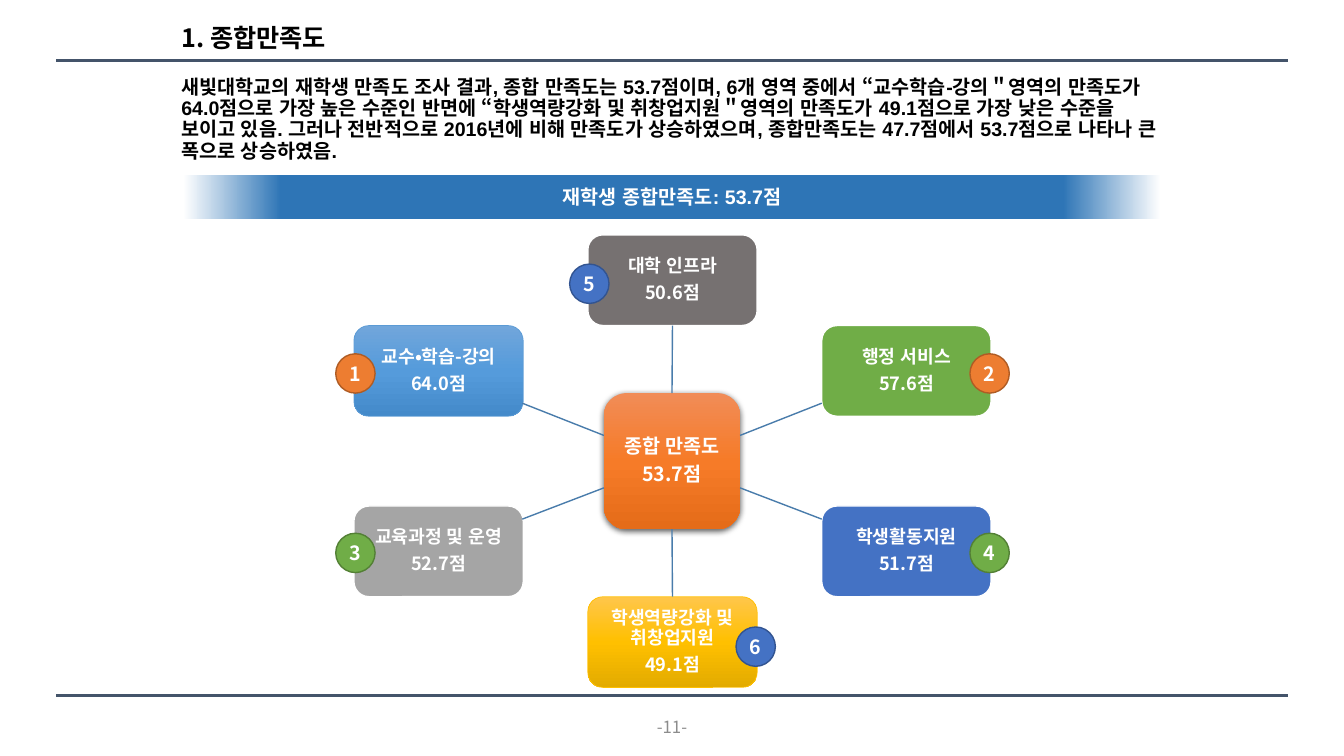
from dataclasses import dataclass

from lxml import etree
from pptx import Presentation
from pptx.dml.color import RGBColor
from pptx.enum.lang import MSO_LANGUAGE_ID
from pptx.enum.shapes import MSO_CONNECTOR, MSO_SHAPE
from pptx.enum.text import MSO_ANCHOR, PP_ALIGN
from pptx.oxml.ns import qn
from pptx.shapes.autoshape import Shape
from pptx.shapes.connector import Connector
from pptx.slide import Slide
from pptx.util import Pt

EMU_PER_PX = 9144
KOREAN = MSO_LANGUAGE_ID.KOREAN
STRAIGHT = MSO_CONNECTOR.STRAIGHT
RECTANGLE, ROUNDED, ELLIPSE = MSO_SHAPE.RECTANGLE, MSO_SHAPE.ROUNDED_RECTANGLE, MSO_SHAPE.OVAL
TOP, MIDDLE = MSO_ANCHOR.TOP, MSO_ANCHOR.MIDDLE
LEFT, CENTER = PP_ALIGN.LEFT, PP_ALIGN.CENTER
TOP_SIDE, BOTTOM_SIDE = 0, 2
BOX_WIDTH, BOX_HEIGHT, BADGE_SIZE = 168, 90, 39
BADGE_LEFT, BADGE_RIGHT = -18, 147

Stops = tuple[tuple[int, str], ...]


@dataclass(frozen=True)
class Theme:
    """Colours, fonts and type sizes of the slide."""
    sans: str = "Noto Sans CJK KR"
    latin: str = "Arial"
    title: int = 18
    normal: int = 14
    label: int = 13
    footer: int = 12
    black: str = "000000"
    white: str = "FFFFFF"
    muted: str = "8C8C8C"
    rule: str = "44546A"
    spoke: str = "497CAB"
    brown: str = "767171"
    gray: str = "A5A5A5"
    orange: str = "ED7D31"
    orange_edge: str = "AF5C24"
    green: str = "70AD47"
    green_edge: str = "538035"
    blue: str = "4472C4"
    blue_edge: str = "325491"
    sky_edge: str = "5B9BD5"
    gold_edge: str = "FFC000"
    banner: Stops = ((0, "FFFFFF"), (10, "2E75B6"), (90, "2E75B6"), (100, "FFFFFF"))
    hub: Stops = ((0, "F18C57"), (50, "F67B28"), (100, "E56C19"))
    sky: Stops = ((0, "71A6DB"), (50, "559BDB"), (100, "448ACA"))
    gold: Stops = ((0, "FFC64B"), (50, "FFC000"), (100, "E3AB00"))


THEME = Theme()


@dataclass(frozen=True)
class TextStyle:
    """Look of the paragraphs in one text frame."""
    size: int
    color: str = THEME.white
    font: str = THEME.sans
    bold: bool = True
    align: PP_ALIGN = CENTER
    anchor: MSO_ANCHOR = MIDDLE
    spacing: float = 1.0
    after: int = 0


@dataclass(frozen=True)
class Area:
    """One satisfaction area with its score box and numbered badge."""
    number: int
    name: str
    score: str
    left: int
    top: int
    fill: str | Stops
    edge: str
    edge_width: float
    badge_shift: int
    badge_top: int
    badge_fill: str
    badge_edge: str


AREAS = (
    Area(5, "대학 인프라", "50.6점", 583, 233, THEME.brown, THEME.white, 1,
         BADGE_LEFT, 262, THEME.blue, THEME.blue_edge),
    Area(2, "행정 서비스", "57.6점", 815, 323, THEME.green, THEME.white, 1,
         BADGE_RIGHT, 351, THEME.orange, THEME.orange_edge),
    Area(4, "학생활동지원", "51.7점", 815, 502, THEME.blue, THEME.white, 1,
         BADGE_RIGHT, 529, THEME.green, THEME.green_edge),
    Area(6, "학생역량강화 및 취창업지원", "49.1점", 583, 592, THEME.gold, THEME.gold_edge, 0.5,
         BADGE_RIGHT, 622, THEME.blue, THEME.blue_edge),
    Area(3, "교육과정 및 운영", "52.7점", 351, 502, THEME.gray, THEME.white, 1,
         BADGE_LEFT, 529, THEME.green, THEME.green_edge),
    Area(1, "교수•학습-강의", "64.0점", 351, 323, THEME.sky, THEME.sky_edge, 0.5,
         BADGE_LEFT, 351, THEME.orange, THEME.orange_edge),
)
SPOKES = ((734, 432, 815, 400), (734, 484, 815, 515), (599, 484, 518, 515), (599, 432, 518, 400))
SUMMARY = (
    "새빛대학교의 재학생 만족도 조사 결과, 종합 만족도는 53.7점이며, 6개 영역 중에서 "
    "“교수학습-강의＂영역의 만족도가 64.0점으로 가장 높은 수준인 반면에 "
    "“학생역량강화 및 취창업지원＂영역의 만족도가 49.1점으로 가장 낮은 수준을 보이고 있음. "
    "그러나 전반적으로 2016년에 비해 만족도가 상승하였으며, 종합만족도는 47.7점에서 "
    "53.7점으로 나타나 큰 폭으로 상승하였음."
)


def px(*lengths: int) -> list[int]:
    """Turn pixel lengths into EMU."""
    return [length * EMU_PER_PX for length in lengths]


def write(shape: Shape, lines: tuple[str, ...], style: TextStyle,
          inset: int | None = None, wrap: bool = True) -> None:
    """Fill a shape with styled paragraphs."""
    frame = shape.text_frame
    frame.word_wrap = wrap
    frame.vertical_anchor = style.anchor
    if inset is not None:
        frame.margin_left = frame.margin_right = inset * EMU_PER_PX
        frame.margin_top = frame.margin_bottom = inset * EMU_PER_PX
    frame.text = "\n".join(lines)
    for para in frame.paragraphs:
        para.alignment = style.align
        para.line_spacing = style.spacing
        para.space_after = Pt(style.after)
        font = para.font
        font.name, font.size, font.bold = style.font, Pt(style.size), style.bold
        font.color.rgb = RGBColor.from_string(style.color)
        font.language_id = KOREAN
        properties = para._p.pPr.find(qn("a:defRPr"))
        east_asian = etree.Element(qn("a:ea"), typeface=THEME.sans)
        properties.find(qn("a:latin")).addnext(east_asian)


def paint(shape: Shape, fill: str | Stops, angle: int) -> None:
    """Give a shape a solid or gradient fill."""
    if isinstance(fill, str):
        shape.fill.solid()
        shape.fill.fore_color.rgb = RGBColor.from_string(fill)
        return
    shape.fill.gradient()
    shape.fill.gradient_angle = angle
    stops = shape._element.spPr.find(qn("a:gradFill")).find(qn("a:gsLst"))
    for stop in list(stops):
        stops.remove(stop)
    for position, color in fill:
        stop = etree.SubElement(stops, qn("a:gs"), pos=str(position * 1000))
        etree.SubElement(stop, qn("a:srgbClr"), val=color)


def add_block(page: Slide, kind: MSO_SHAPE, bounds: tuple[int, int, int, int],
              fill: str | Stops, edge: str | None = None, edge_width: float = 1,
              angle: int = 270) -> Shape:
    """Add a filled preset shape without a shadow."""
    shape = page.shapes.add_shape(kind, *px(*bounds))
    shape.shadow.inherit = False
    paint(shape, fill, angle)
    if edge is None:
        shape.line.fill.background()
    else:
        shape.line.color.rgb = RGBColor.from_string(edge)
        shape.line.width = Pt(edge_width)
    return shape


def add_line(page: Slide, ends: tuple[int, int, int, int], color: str, width: float) -> Connector:
    """Add a straight line without a shadow."""
    line = page.shapes.add_connector(STRAIGHT, *px(*ends))
    line.line.color.rgb = RGBColor.from_string(color)
    line.line.width = Pt(width)
    etree.SubElement(line._element.spPr, qn("a:effectLst"))
    return line


def add_text(page: Slide, bounds: tuple[int, int, int, int], text: str,
             style: TextStyle, wrap: bool = True) -> None:
    """Add a text box."""
    write(page.shapes.add_textbox(*px(*bounds)), (text,), style, wrap=wrap)


def add_hub(page: Slide) -> Shape:
    """Add the central score with its soft shadow."""
    hub = add_block(page, ROUNDED, (599, 390, 135, 135), THEME.hub)
    effects = hub._element.spPr.find(qn("a:effectLst"))
    shadow = etree.SubElement(effects, qn("a:outerShdw"), blurRad=str(Pt(4.5)),
                              dist=str(Pt(1.5)), dir="5400000", algn="ctr", rotWithShape="0")
    color = etree.SubElement(shadow, qn("a:srgbClr"), val=THEME.black)
    etree.SubElement(color, qn("a:alpha"), val="63000")
    write(hub, ("종합 만족도", "53.7점"), TextStyle(THEME.normal, spacing=0.9, after=5), inset=4)
    return hub


def add_area(page: Slide, area: Area) -> Shape:
    """Add the score box of an area."""
    box = add_block(page, ROUNDED, (area.left, area.top, BOX_WIDTH, BOX_HEIGHT),
                    area.fill, area.edge, area.edge_width)
    write(box, (area.name, area.score), TextStyle(THEME.label, spacing=0.9, after=5), inset=4)
    return box


def add_badge(page: Slide, area: Area) -> None:
    """Add the numbered circle of an area."""
    bounds = (area.left + area.badge_shift, area.badge_top, BADGE_SIZE, BADGE_SIZE)
    badge = add_block(page, ELLIPSE, bounds, area.badge_fill, area.badge_edge)
    write(badge, (str(area.number),), TextStyle(THEME.normal), inset=0)


def main() -> None:
    """Build and save the slide."""
    deck = Presentation()
    deck.slide_width, deck.slide_height = px(1333, 750)
    page = deck.slides.add_slide(deck.slide_layouts[6])
    for height in (60, 690):
        add_line(page, (56, height, 1277, height), THEME.rule, 2)
    add_text(page, (170, 21, 185, 37), "1. 종합만족도",
             TextStyle(THEME.title, THEME.black, align=LEFT, spacing=0.9), wrap=False)
    add_text(page, (639, 706, 55, 30), "-11-",
             TextStyle(THEME.footer, THEME.muted, bold=False), wrap=False)
    banner = add_block(page, RECTANGLE, (182, 174, 969, 43), THEME.banner, angle=0)
    write(banner, ("재학생 종합만족도: 53.7점",), TextStyle(THEME.normal, font=THEME.latin))
    add_text(page, (170, 72, 992, 95), SUMMARY,
             TextStyle(THEME.normal, THEME.black, THEME.latin, align=LEFT, anchor=TOP,
                       spacing=0.9, after=3))
    hub = add_hub(page)
    boxes = {area.number: add_area(page, area) for area in AREAS}
    for number, hub_side, box_side in ((5, TOP_SIDE, BOTTOM_SIDE), (6, BOTTOM_SIDE, TOP_SIDE)):
        spoke = add_line(page, (0, 0, 0, 0), THEME.spoke, 1)
        spoke.begin_connect(hub, hub_side)
        spoke.end_connect(boxes[number], box_side)
    for ends in SPOKES:
        add_line(page, ends, THEME.spoke, 1)
    for area in AREAS:
        add_badge(page, area)
    deck.save("out.pptx")


if __name__ == "__main__":
    main()
